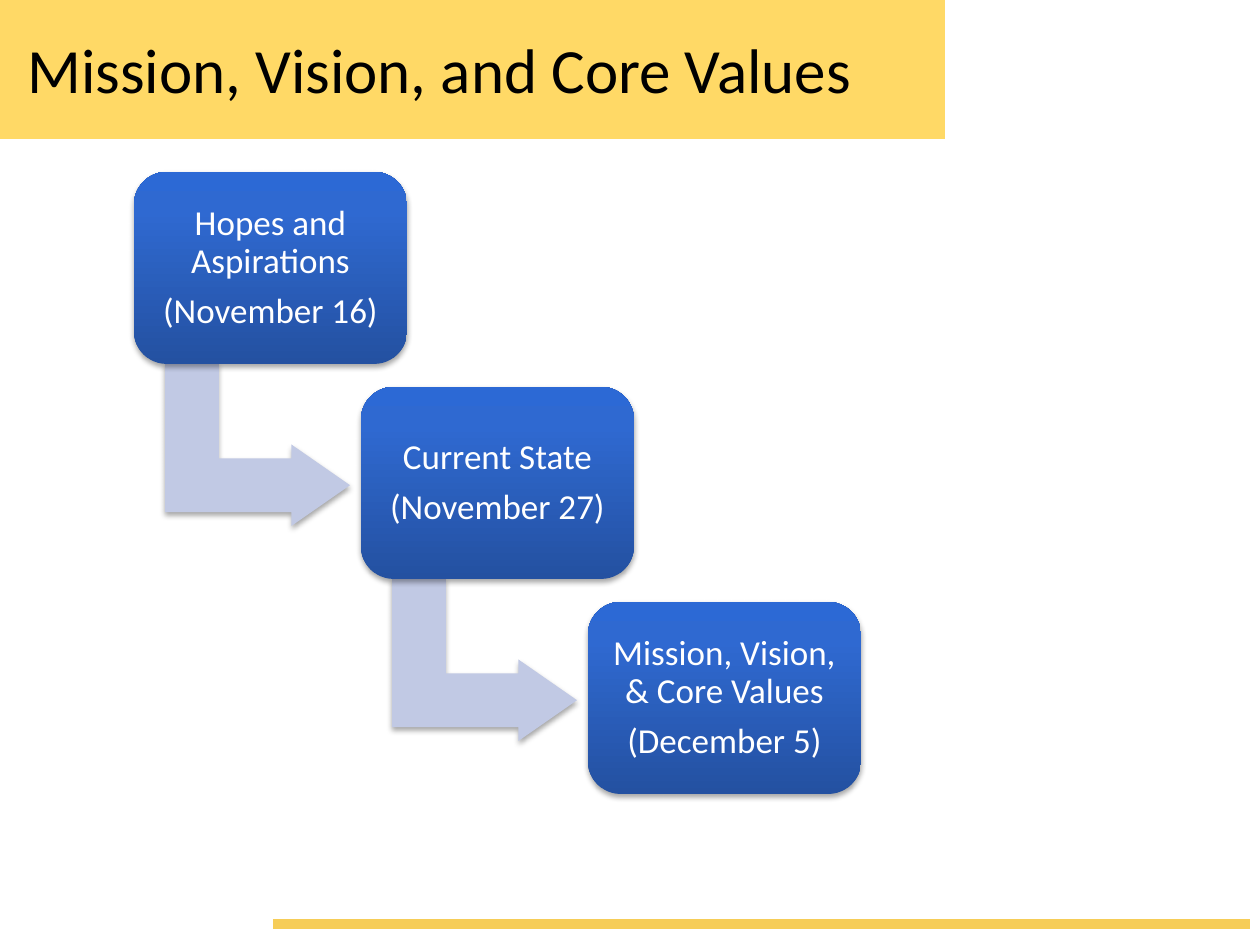
from copy import deepcopy

from lxml import etree
from pptx import Presentation
from pptx.dml.color import RGBColor
from pptx.enum.shapes import MSO_CONNECTOR, MSO_SHAPE
from pptx.enum.text import MSO_ANCHOR, PP_ALIGN
from pptx.oxml.ns import qn
from pptx.util import Emu, Pt

RECTANGLE = MSO_SHAPE.RECTANGLE
ROUNDED = MSO_SHAPE.ROUNDED_RECTANGLE
BENT_ARROW = MSO_SHAPE.BENT_UP_ARROW
STRAIGHT = MSO_CONNECTOR.STRAIGHT
MIDDLE = MSO_ANCHOR.MIDDLE
CENTER = PP_ALIGN.CENTER

BANNER_YELLOW = RGBColor(0xFF, 0xD9, 0x66)
RULE_YELLOW = RGBColor(0xF6, 0xCD, 0x58)
ARROW_BLUE = RGBColor(0xC1, 0xC9, 0xE4)
STEP_GRADIENT = [
    (0, RGBColor(0x24, 0x51, 0xA1)),
    (0.8, RGBColor(0x2F, 0x69, 0xD1)),
    (1, RGBColor(0x2C, 0x69, 0xD5)),
]
BLACK = RGBColor(0, 0, 0)
WHITE = RGBColor(0xFF, 0xFF, 0xFF)

FONT = "Calibri"
PX_PER_INCH = 126
STEPS = [
    ["Hopes and Aspirations", "(November 16)"],
    ["Current State", "(November 27)"],
    ["Mission, Vision, & Core Values", "(December 5)"],
]


def px(length):
    """Turn a length in px into EMU."""
    return Emu(round(length * 914400 / PX_PER_INCH))


def add_span(para, text, size, color):
    """Add one formatted run to a paragraph."""
    span = para.add_run()
    span.text = text
    span.font.name = FONT
    span.font.size = Pt(size)
    span.font.color.rgb = color


def add_plain_shape(page, kind, left, top, width, height):
    """Add a preset shape with neither outline nor shadow."""
    shape = page.shapes.add_shape(kind, px(left), px(top), px(width), px(height))
    shape.line.fill.background()
    shape.shadow.inherit = False
    return shape


def add_soft_shadow(shape):
    """Give a shape a faint shadow straight below it."""
    effects = shape._element.spPr.find(qn("a:effectLst"))
    shadow = etree.SubElement(
        effects, qn("a:outerShdw"), blurRad="40000", dist="23000",
        dir="5400000", rotWithShape="0")
    color = etree.SubElement(shadow, qn("a:srgbClr"), val=str(BLACK))
    etree.SubElement(color, qn("a:alpha"), val="35000")


def fill_step(shape):
    """Fill a step with its three-stop gradient, darkest at the bottom."""
    shape.fill.gradient()
    shape.fill.gradient_angle = 90
    stops = shape._element.spPr.find(".//" + qn("a:gsLst"))
    stops.append(deepcopy(stops[-1]))
    for stop, (position, color) in zip(shape.fill.gradient_stops, STEP_GRADIENT):
        stop.position = position
        stop.color.rgb = color


def add_header(page, left, top, width, height):
    """Draw the banner with the slide title."""
    banner = add_plain_shape(page, RECTANGLE, left, top, width, height)
    banner.fill.solid()
    banner.fill.fore_color.rgb = BANNER_YELLOW
    box = page.shapes.add_textbox(
        px(left + 15), px(top + 10), px(width - 37), px(height - 23))
    frame = box.text_frame
    frame.word_wrap = True
    frame.vertical_anchor = MIDDLE
    add_span(frame.paragraphs[0], "Mission, Vision, and Core Values", 36, BLACK)


def add_footer_rule(page, left, top, width):
    """Draw the thick rule at the foot of the slide."""
    rule = page.shapes.add_connector(
        STRAIGHT, px(left), px(top), px(left + width), px(top))
    rule.line.color.rgb = RULE_YELLOW
    rule.line.width = Pt(6)
    etree.SubElement(rule._element.spPr, qn("a:effectLst"))


def add_step_arrow(page, left, top):
    """Draw the arrow that turns from one step to the next."""
    arrow = add_plain_shape(page, BENT_ARROW, left, top, 163, 185)
    arrow.rotation = 90
    for index, value in enumerate([0.33, 0.25, 0.36]):
        arrow.adjustments[index] = value
    arrow.fill.solid()
    arrow.fill.fore_color.rgb = ARROW_BLUE
    add_soft_shadow(arrow)


def add_step(page, left, top, width, height, lines):
    """Draw one step with its name and date."""
    step = add_plain_shape(page, ROUNDED, left, top, width, height)
    step.adjustments[0] = 0.17
    fill_step(step)
    add_soft_shadow(step)
    frame = step.text_frame
    frame.word_wrap = True
    frame.vertical_anchor = MIDDLE
    frame.margin_left = frame.margin_right = px(10)
    frame.margin_top = frame.margin_bottom = px(10)
    for index, line in enumerate(lines):
        para = frame.add_paragraph() if index else frame.paragraphs[0]
        para.alignment = CENTER
        para.line_spacing = 0.9
        para.space_after = Pt(7)
        add_span(para, line, 20, WHITE)


def add_staircase(page, left, top, width, height):
    """Lay the steps diagonally across a box, joined by arrows."""
    step_width, step_height = 273, 192
    gaps = len(STEPS) - 1
    for index, lines in enumerate(STEPS):
        step_left = left + index * (width - step_width) // gaps
        step_top = top + index * (height - step_height) // gaps
        if index < gaps:
            add_step_arrow(page, step_left + 42, step_top + 180)
        add_step(page, step_left, step_top, step_width, step_height, lines)


def main():
    """Build the slide and save it."""
    deck = Presentation()
    deck.slide_width, deck.slide_height = px(1260), px(945)
    page = deck.slides.add_slide(deck.slide_layouts[6])
    add_header(page, 0, 0, 945, 139)
    add_footer_rule(page, 273, 924, 977)
    add_staircase(page, 134, 172, 727, 622)
    deck.save("out.pptx")


if __name__ == "__main__":
    main()
